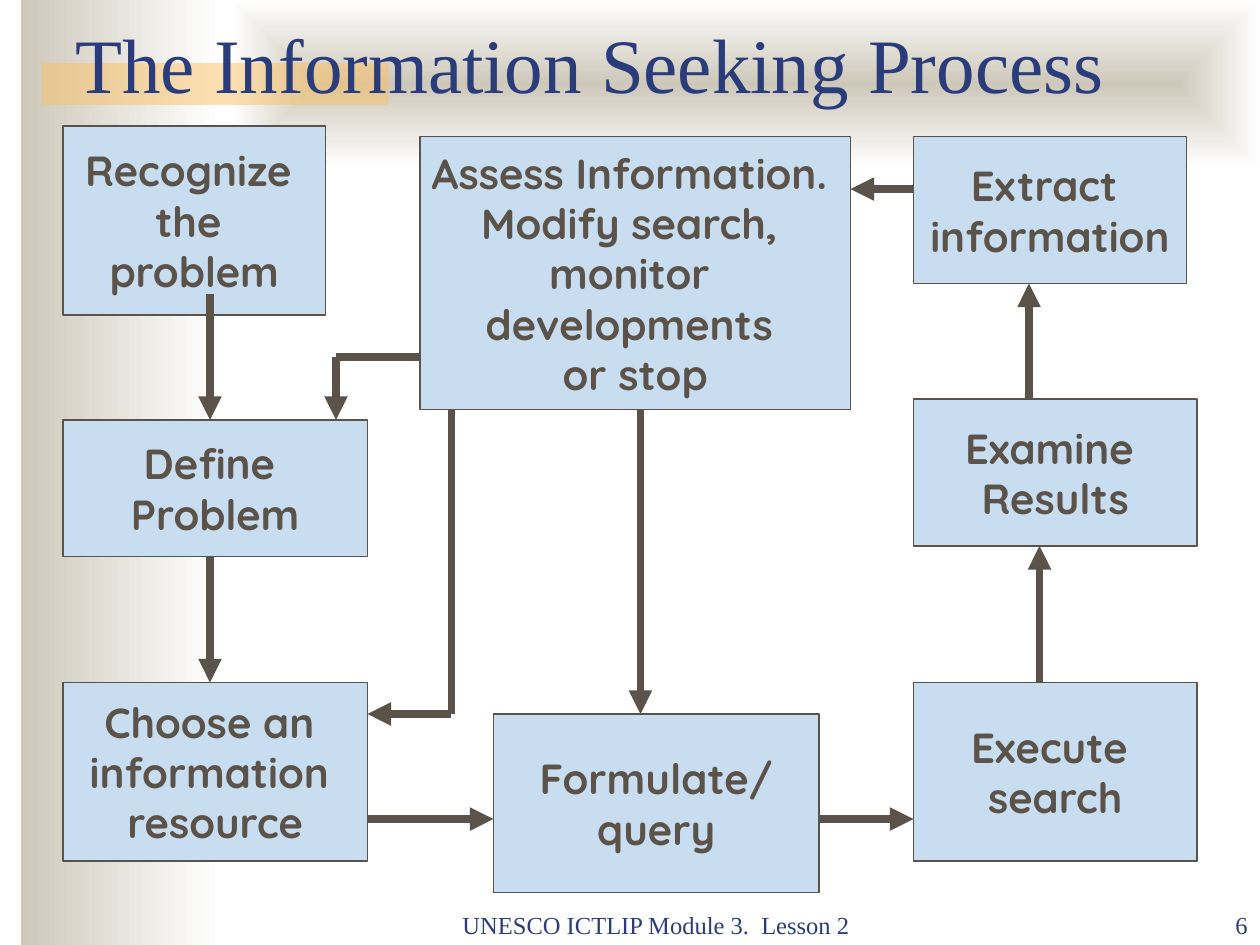
from typing import NamedTuple

from lxml import etree
from pptx import Presentation
from pptx.dml.color import RGBColor
from pptx.enum.shapes import MSO_CONNECTOR, MSO_SHAPE
from pptx.enum.text import MSO_ANCHOR, PP_ALIGN
from pptx.oxml.ns import qn
from pptx.util import Cm, Pt

RECT = MSO_SHAPE.RECTANGLE
STRAIGHT = MSO_CONNECTOR.STRAIGHT
LEFT, CENTER, RIGHT = PP_ALIGN.LEFT, PP_ALIGN.CENTER, PP_ALIGN.RIGHT
MIDDLE, BOTTOM = MSO_ANCHOR.MIDDLE, MSO_ANCHOR.BOTTOM

NAVY = RGBColor(0x2A, 0x3D, 0x7A)
BROWN = RGBColor(0x5B, 0x52, 0x49)
SKY = RGBColor(0xC9, 0xDD, 0xF1)
SAND = RGBColor(0xCE, 0xC8, 0xBA)
AMBER = RGBColor(0xFA, 0xC1, 0x64)
WHITE = RGBColor(0xFF, 0xFF, 0xFF)
SERIF, SANS = "Times New Roman", "Quicksand"


class Box(NamedTuple):
    """Place and size in grid steps, with the lines of text inside."""
    x: float
    y: float
    w: float
    h: float
    text: str = ""


class Arrow(NamedTuple):
    """Corner points in grid steps; the last leg carries the head."""
    points: tuple[tuple[float, float], ...]


def grid(n: float) -> Cm:
    """Twelve grid steps make 2.54 cm."""
    return Cm(n * 2.54 / 12)


def frame(box: Box) -> tuple[Cm, ...]:
    return tuple(grid(n) for n in box[:4])


def write(shape, text: str, *, size: float, font: str, color: RGBColor,
          bold: bool = False, align=LEFT, anchor=BOTTOM, wrap: bool = True):
    body = shape.text_frame
    body.word_wrap = wrap
    body.vertical_anchor = anchor
    for i, line in enumerate(text.split("\n")):
        para = body.paragraphs[0] if i == 0 else body.add_paragraph()
        para.alignment = align
        run = para.add_run()
        run.text = line
        run.font.size = Pt(size)
        run.font.name = font
        run.font.bold = bold
        run.font.color.rgb = color


def add_rect(slide, box: Box):
    shape = slide.shapes.add_shape(RECT, *frame(box))
    shape.shadow.inherit = False
    shape.line.fill.background()
    return shape


def add_fade(slide, box: Box, central: bool = False):
    shape = add_rect(slide, box)
    shape.fill.gradient()
    shape.fill.gradient_angle = 0
    for stop, color in zip(shape.fill.gradient_stops, (SAND, WHITE)):
        stop.color.rgb = color
    if central:
        grad = shape.fill._xPr.find(qn("a:gradFill"))
        grad.remove(grad.find(qn("a:lin")))
        route = etree.SubElement(grad, qn("a:path"), {"path": "shape"})
        sides = dict.fromkeys("ltrb", "50000")
        etree.SubElement(route, qn("a:fillToRect"), sides)


def add_bar(slide, box: Box):
    shape = add_rect(slide, box)
    shape.fill.solid()
    shape.fill.fore_color.rgb = AMBER
    tint = shape.fill._xPr.find(qn("a:solidFill"))[0]
    etree.SubElement(tint, qn("a:alpha"), {"val": "50000"})


def add_label(slide, box: Box, size: float, align=LEFT):
    shape = slide.shapes.add_textbox(*frame(box))
    write(shape, box.text, size=size, font=SERIF, color=NAVY, align=align)


def add_step(slide, box: Box):
    shape = add_rect(slide, box)
    shape.fill.solid()
    shape.fill.fore_color.rgb = SKY
    shape.line.color.rgb = BROWN
    shape.line.width = Pt(0.75)
    write(shape, box.text, size=24, font=SANS, color=BROWN, bold=True,
          align=CENTER, anchor=MIDDLE, wrap=False)


def add_arrow(slide, arrow: Arrow):
    legs = list(zip(arrow.points, arrow.points[1:]))
    for i, (start, end) in enumerate(legs, 1):
        ends = (grid(n) for n in (*start, *end))
        leg = slide.shapes.add_connector(STRAIGHT, *ends)
        leg.line.color.rgb = BROWN
        leg.line.width = Pt(4.5)
        if i == len(legs):
            line = leg.line._get_or_add_ln()
            etree.SubElement(line, qn("a:tailEnd"), {"type": "triangle"})
        etree.SubElement(leg._element.spPr, qn("a:effectLst"))


# Columns and rows that the steps share
COL_A, COL_C = 6, 87
ROW_TOP, ROW_END = 13, 65

STEPS = (
    Box(COL_A, 12, 25, 18, "Recognize \nthe \nproblem"),
    Box(COL_A, ROW_END, 29, 17, "Choose an \ninformation \nresource"),
    Box(47, 68, 31, 17, "Formulate/\nquery"),
    Box(COL_C, ROW_END, 27, 17, "Execute \nsearch"),
    Box(40, ROW_TOP, 41, 26, "Assess Information. \nModify search, \n"
                             "monitor \ndevelopments \nor stop"),
    Box(COL_C, ROW_TOP, 26, 14, "Extract \ninformation"),
    Box(COL_A, 40, 29, 13, "Define \nProblem"),
    Box(COL_C, 38, 27, 14, "Examine \nResults"),
)

ARROWS = (
    Arrow(((35, 78), (47, 78))),             # choose to formulate
    Arrow(((78, 78), (87, 78))),             # formulate to execute
    Arrow(((20, 28), (20, 40))),             # recognize to define
    Arrow(((87, 18), (81, 18))),             # extract to assess
    Arrow(((20, 53), (20, 65))),             # define to choose
    Arrow(((99, 65), (99, 52))),             # execute to examine
    Arrow(((98, 38), (98, 27))),             # examine to extract
    Arrow(((43, 39), (43, 68), (35, 68))),   # assess back to choose
    Arrow(((40, 34), (32, 34), (32, 40))),   # assess back to define
    Arrow(((61, 39), (61, 68))),             # assess back to formulate
)


def main():
    deck = Presentation()
    deck.slide_width, deck.slide_height = grid(120), grid(90)
    slide = deck.slides.add_slide(deck.slide_layouts[6])

    # Backdrop
    add_fade(slide, Box(2, 0, 19, 90))
    add_fade(slide, Box(22, 0, 98, 16), central=True)
    add_bar(slide, Box(4, 6, 33, 4))

    # Footer and title
    add_label(slide, Box(42, 84.1, 41, 6,
                         "UNESCO ICTLIP Module 3.  Lesson 2"), 14, CENTER)
    add_label(slide, Box(108, 84.1, 12, 6, "6"), 14, RIGHT)
    add_label(slide, Box(6, 0, 102, 11, "The Information Seeking Process"), 44)

    # Flow chart
    for step in STEPS:
        add_step(slide, step)
    for arrow in ARROWS:
        add_arrow(slide, arrow)

    deck.save("out.pptx")


if __name__ == "__main__":
    main()
